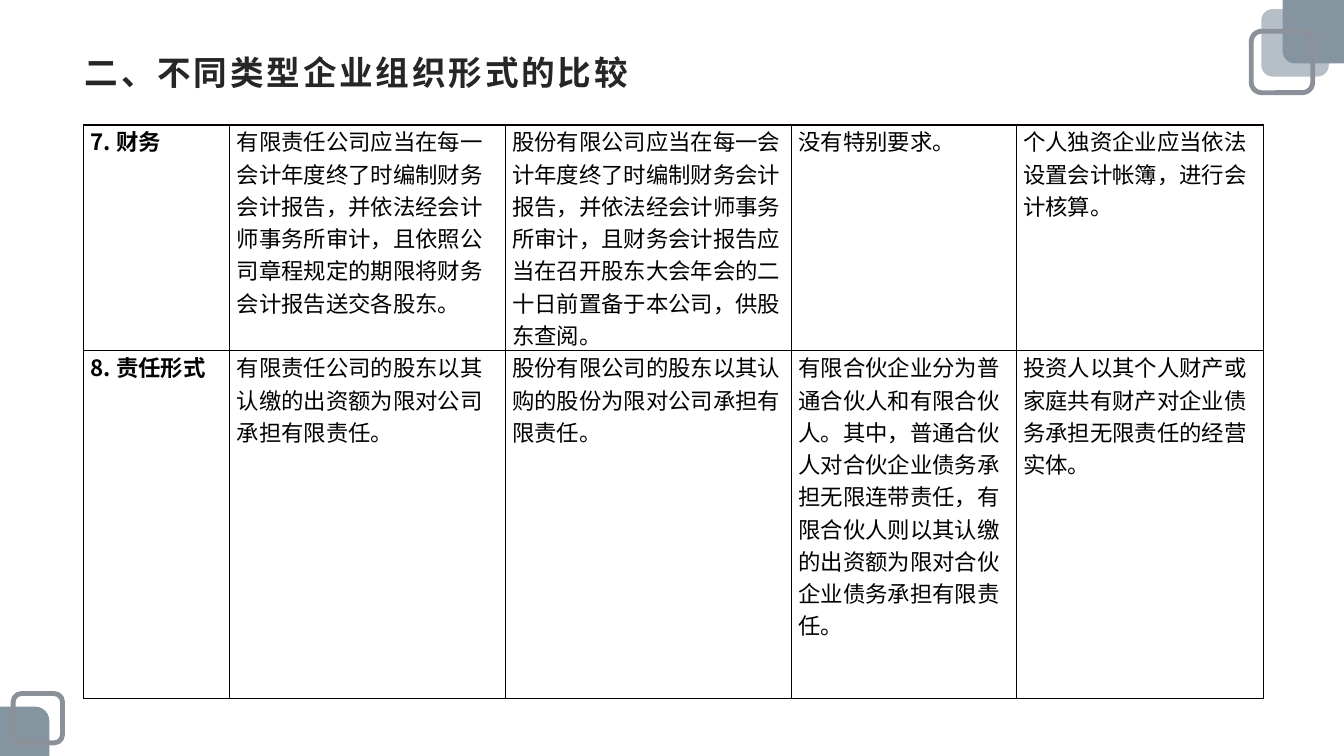
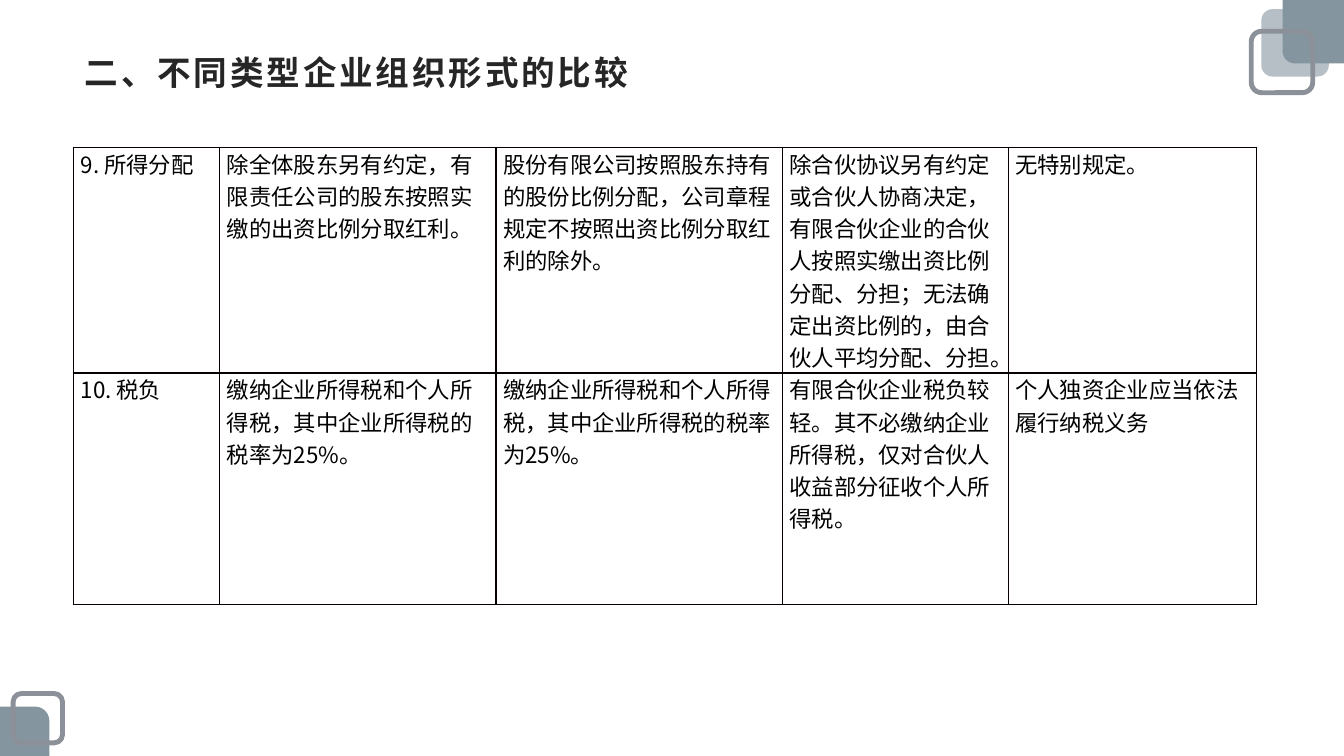
from dataclasses import dataclass

from lxml import etree
from pptx import Presentation
from pptx.dml.color import RGBColor
from pptx.enum import lang, shapes, text
from pptx.oxml import ns
from pptx.util import Inches, Pt


@dataclass(frozen=True)
class Theme:
    slate: RGBColor = RGBColor.from_string("85959F")
    mist: RGBColor = RGBColor.from_string("B6BFC5")
    frame: RGBColor = RGBColor.from_string("8C9199")
    title: RGBColor = RGBColor.from_string("262626")
    body: RGBColor = RGBColor.from_string("000000")
    border: str = "080000"
    title_font: str = "Arial"
    body_font: str = "Noto Sans CJK SC"
    title_size: int = Pt(24)
    body_size: int = Pt(16)
    title_spacing: int = 200
    frame_width: int = Pt(3.5)
    border_width: int = Pt(1)


THEME = Theme()
TITLE = "二、不同类型企业组织形式的比较"
TITLE_BOX = (0.73, 0.48, 11.87, 0.48)
TITLE_INSETS = (0.11, 0.04, 0.08, 0.04)
CELL_INSETS = (0.07, 0, 0.07, 0)

ROUND = shapes.MSO_SHAPE.ROUNDED_RECTANGLE
ONE_CORNER = shapes.MSO_SHAPE.ROUND_1_RECTANGLE
DECORATIONS = [
    (ONE_CORNER, (0, 7.01, 0.49, 0.49), THEME.slate, 0.29, 0),
    (ROUND, (12.51, 0.09, 0.67, 0.67), THEME.mist, 0.17, 0),
    (ONE_CORNER, (12.72, 0, 0.62, 0.63), THEME.slate, 0.2, 180),
    (ROUND, (12.41, 0.31, 0.61, 0.61), None, 0.17, 0),
    (ROUND, (0.13, 6.88, 0.49, 0.49), None, 0.17, 0),
]

TABLES = [
    {
        "origin": (0.83, 1.24),
        "columns": (1.45, 2.73, 2.84, 2.23, 2.45),
        "rows": (1.87, 3.45),
        "bold_labels": True,
        "cells": [
            (
                "7. 财务",
                "有限责任公司应当在每一会计年度终了时编制财务会计报告，并依法经会计师事务所审计，且依照公司章程规定的期限将财务会计报告送交各股东。",
                "股份有限公司应当在每一会计年度终了时编制财务会计报告，并依法经会计师事务所审计，且财务会计报告应当在召开股东大会年会的二十日前置备于本公司，供股东查阅。",
                "没有特别要求。",
                "个人独资企业应当依法设置会计帐簿，进行会计核算。",
            ),
            (
                "8. 责任形式",
                "有限责任公司的股东以其认缴的出资额为限对公司承担有限责任。",
                "股份有限公司的股东以其认购的股份为限对公司承担有限责任。",
                "有限合伙企业分为普通合伙人和有限合伙人。其中，普通合伙人对合伙企业债务承担无限连带责任，有限合伙人则以其认缴的出资额为限对合伙企业债务承担有限责任。",
                "投资人以其个人财产或家庭共有财产对企业债务承担无限责任的经营实体。",
            ),
        ],
    },
    {
        "origin": (0.73, 1.46),
        "columns": (1.45, 2.74, 2.84, 2.24, 2.46),
        "rows": (1.87, 2.3),
        "bold_labels": False,
        "cells": [
            (
                "9. 所得分配",
                "除全体股东另有约定，有限责任公司的股东按照实缴的出资比例分取红利。",
                "股份有限公司按照股东持有的股份比例分配，公司章程规定不按照出资比例分取红利的除外。",
                "除合伙协议另有约定或合伙人协商决定，有限合伙企业的合伙人按照实缴出资比例分配、分担；无法确定出资比例的，由合伙人平均分配、分担。",
                "无特别规定。",
            ),
            (
                "10. 税负",
                "缴纳企业所得税和个人所得税，其中企业所得税的税率为25%。",
                "缴纳企业所得税和个人所得税，其中企业所得税的税率为25%。",
                "有限合伙企业税负较轻。其不必缴纳企业所得税，仅对合伙人收益部分征收个人所得税。",
                "个人独资企业应当依法履行纳税义务",
            ),
        ],
    },
]


def inches(values):
    return [Inches(value) for value in values]


def set_attributes(target, values):
    for name, value in values.items():
        setattr(target, name, value)


def set_insets(target, values):
    sides = ("margin_left", "margin_top", "margin_right", "margin_bottom")
    set_attributes(target, dict(zip(sides, inches(values))))


def write(text_frame, content, color, alignment, **font_values):
    paragraph = text_frame.paragraphs[0]
    paragraph.alignment = alignment
    run = paragraph.add_run()
    run.text = content
    set_attributes(run.font, font_values)
    run.font.language_id = lang.MSO_LANGUAGE_ID.SIMPLIFIED_CHINESE
    run.font.color.rgb = color
    properties = run._r.get_or_add_rPr()
    etree.SubElement(properties, ns.qn("a:ea"), typeface=THEME.body_font)
    return properties


def decorate_layout(layout, slide):
    for kind, box, fill, corner, rotation in DECORATIONS:
        shape = slide.shapes.add_shape(kind, *inches(box))
        shape.shadow.inherit = False
        shape.adjustments[0] = corner
        shape.rotation = rotation
        if fill is None:
            shape.fill.background()
            shape.line.color.rgb = THEME.frame
            shape.line.width = THEME.frame_width
        else:
            shape.fill.solid()
            shape.fill.fore_color.rgb = fill
            shape.line.fill.background()
        layout.shapes.element.append(shape.element)


def add_title(slide):
    title = slide.shapes.title
    set_attributes(title, dict(zip(("left", "top", "width", "height"), inches(TITLE_BOX))))
    set_insets(title.text_frame, TITLE_INSETS)
    set_attributes(title.text_frame, {
        "word_wrap": True,
        "auto_size": text.MSO_AUTO_SIZE.NONE,
        "vertical_anchor": text.MSO_ANCHOR.MIDDLE,
    })
    properties = write(title.text_frame, TITLE, THEME.title, text.PP_ALIGN.LEFT,
                       name=THEME.title_font, size=THEME.title_size, bold=True)
    properties.set("spc", str(THEME.title_spacing))


def add_borders(cell):
    properties = cell._tc.get_or_add_tcPr()
    for index, side in enumerate(("a:lnL", "a:lnR", "a:lnT", "a:lnB")):
        line = etree.Element(ns.qn(side), w=str(THEME.border_width))
        fill = etree.SubElement(line, ns.qn("a:solidFill"))
        etree.SubElement(fill, ns.qn("a:srgbClr"), val=THEME.border)
        properties.insert(index, line)


def add_comparison(slide, data):
    columns, rows = data["columns"], data["rows"]
    box = (*data["origin"], sum(columns), sum(rows))
    table = slide.shapes.add_table(len(rows), len(columns), *inches(box)).table
    set_attributes(table, {"first_row": False, "horz_banding": False})
    for column, width in zip(table.columns, inches(columns)):
        column.width = width
    for row, height in zip(table.rows, inches(rows)):
        row.height = height
    for row, contents in zip(table.rows, data["cells"]):
        for index, (cell, content) in enumerate(zip(row.cells, contents)):
            cell.fill.background()
            set_insets(cell, CELL_INSETS)
            add_borders(cell)
            write(cell.text_frame, content, THEME.body, text.PP_ALIGN.LEFT,
                  name=THEME.body_font, size=THEME.body_size,
                  bold=data["bold_labels"] and index == 0)


def main():
    presentation = Presentation()
    presentation.slide_width = Inches(13.33)
    presentation.slide_height = Inches(7.5)
    layout = presentation.slide_layouts[5]
    for index, data in enumerate(TABLES):
        slide = presentation.slides.add_slide(layout)
        if index == 0:
            decorate_layout(layout, slide)
        add_title(slide)
        add_comparison(slide, data)
    presentation.save("out.pptx")


if __name__ == "__main__":
    main()
